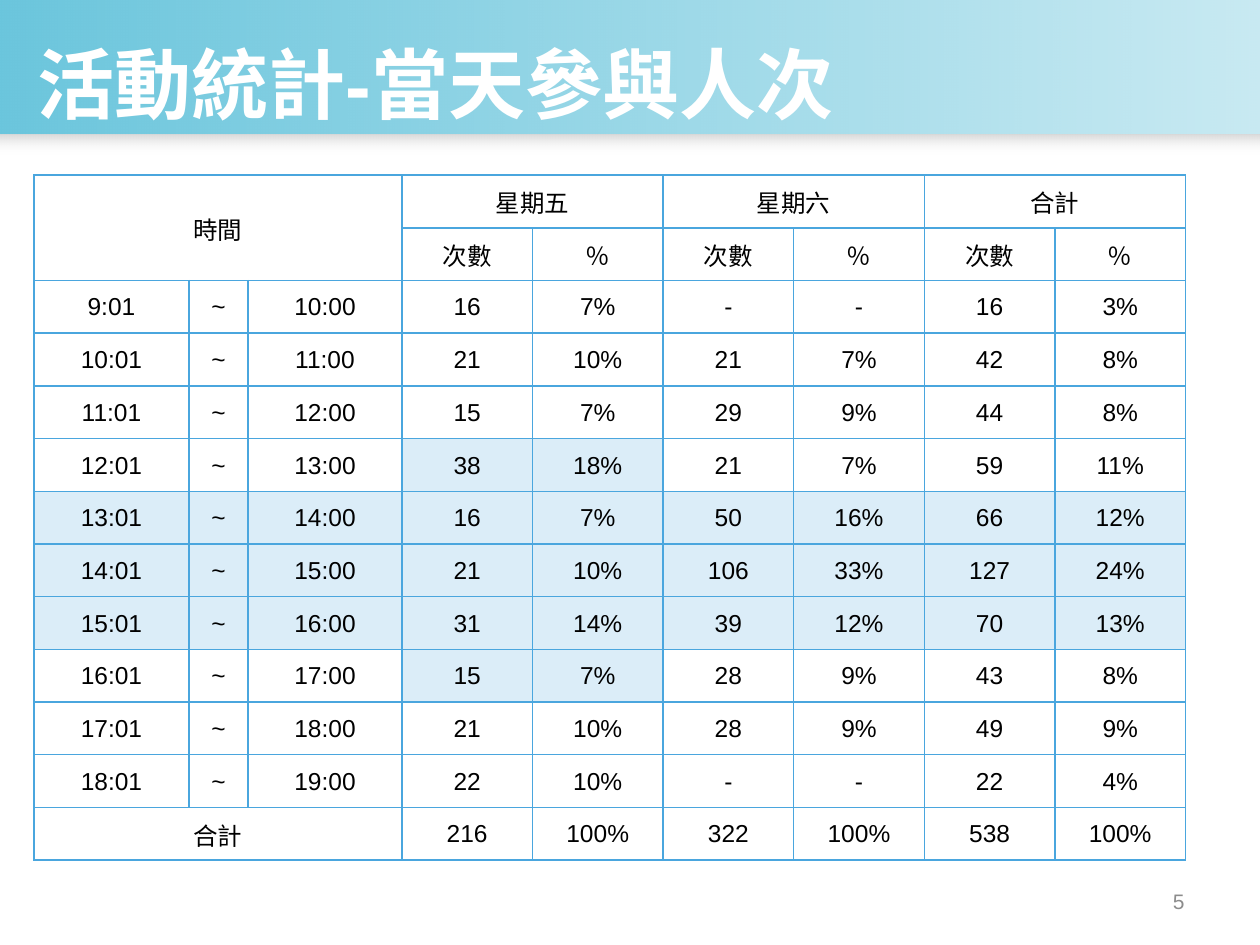
from dataclasses import dataclass
from lxml.etree import SubElement
from pptx import Presentation
from pptx.dml.color import RGBColor
from pptx.enum.shapes import MSO_SHAPE
from pptx.enum.text import MSO_ANCHOR, PP_ALIGN
from pptx.oxml.ns import qn
from pptx.util import Inches, Pt


@dataclass(frozen=True)
class Theme:
    font: str = "Arial"
    aqua: str = "6BC6DD"
    shade: str = "D9D9D9"
    white: str = "FFFFFF"
    black: str = "000000"
    gray: str = "8C8C8C"
    edge: str = "4AA6DE"
    tint: str = "DBEDF8"
    head: int = 44
    body: int = 14
    foot: int = 12


theme = Theme()


def style(frame, size, color, align, bold=False):
    for para in frame.paragraphs:
        para.alignment = align
        for run in para.runs:
            run.font.name = theme.font
            run.font.size = Pt(size)
            run.font.bold = bold
            run.font.color.rgb = RGBColor.from_string(color)


def border(cell):
    props = cell._tc.get_or_add_tcPr()
    for side in ("lnL", "lnR", "lnT", "lnB"):
        line = SubElement(props, qn(f"a:{side}"), w=str(Pt(1)))
        fill = SubElement(line, qn("a:solidFill"))
        SubElement(fill, qn("a:srgbClr"), val=theme.edge)


deck = Presentation()
deck.slide_width, deck.slide_height = Inches(10), Inches(7.5)
slide = deck.slides.add_slide(deck.slide_layouts[6])

# Title band and the soft shade below it, each fading to an opacity in percent
for top, height, start, end, fade, angle in (
    (0, 1.07, theme.aqua, theme.aqua, 37, 0),
    (1.07, 0.16, theme.shade, theme.white, 0, 270),
):
    band = slide.shapes.add_shape(
        MSO_SHAPE.RECTANGLE, 0, Inches(top), Inches(10), Inches(height))
    band.shadow.inherit = False
    band.line.fill.background()
    band.fill.gradient()
    band.fill.gradient_angle = angle
    for stop, color in zip(band.fill.gradient_stops, (start, end)):
        stop.color.rgb = RGBColor.from_string(color)
    last = list(band._element.iter(qn("a:srgbClr")))[-1]
    SubElement(last, qn("a:alpha"), val=str(fade * 1000))

# Title and page number
for text, left, top, width, height, size, color, align, bold in (
    ("活動統計-當天參與人次", 0.2, 0.16, 9.53, 0.99,
     theme.head, theme.white, PP_ALIGN.LEFT, True),
    ("5", 7.17, 6.95, 2.33, 0.4,
     theme.foot, theme.gray, PP_ALIGN.RIGHT, False),
):
    box = slide.shapes.add_textbox(
        Inches(left), Inches(top), Inches(width), Inches(height))
    frame = box.text_frame
    frame.word_wrap = True
    frame.vertical_anchor = MSO_ANCHOR.MIDDLE
    frame.text = text
    style(frame, size, color, align, bold)

# Table content: counts and shares for Friday, Saturday and both days
counts = (
    ("16", "7%", "-", "-", "16", "3%"),
    ("21", "10%", "21", "7%", "42", "8%"),
    ("15", "7%", "29", "9%", "44", "8%"),
    ("38", "18%", "21", "7%", "59", "11%"),
    ("16", "7%", "50", "16%", "66", "12%"),
    ("21", "10%", "106", "33%", "127", "24%"),
    ("31", "14%", "39", "12%", "70", "13%"),
    ("15", "7%", "28", "9%", "43", "8%"),
    ("21", "10%", "28", "9%", "49", "9%"),
    ("22", "10%", "-", "-", "22", "4%"),
)
rows = [
    ("時間", "", "", "星期五", "", "星期六", "", "合計", ""),
    ("", "", "") + ("次數", "％") * 3,
]
for hour, count in enumerate(counts, 9):
    rows.append((f"{hour}:01", "~", f"{hour + 1}:00") + count)
rows.append(("合計", "", "", "216", "100%", "322", "100%", "538", "100%"))

# Table grid
width, height = 9.14, 5.44
grid = slide.shapes.add_table(
    len(rows), 9, Inches(0.27), Inches(1.39), Inches(width), Inches(height)).table
grid.first_row = grid.horz_banding = False
times = [1.23, 0.47, 1.22]
sizes = times + [(width - sum(times)) / 6] * 6
for col, size in zip(grid.columns, sizes):
    col.width = Inches(size)
for row in grid.rows:
    row.height = Inches(height / len(rows))

# Merged cells: first row, first column, last row, last column
for top, left, low, right in (
    (0, 0, 1, 2), (0, 3, 0, 4), (0, 5, 0, 6), (0, 7, 0, 8), (12, 0, 12, 2),
):
    grid.cell(top, left).merge(grid.cell(low, right))

# Cell text, borders and tint of the busy hours
for r, row in enumerate(rows):
    for c, text in enumerate(row):
        cell = grid.cell(r, c)
        cell.margin_left = cell.margin_right = cell.margin_top = Inches(0.01)
        cell.margin_bottom = 0
        cell.vertical_anchor = MSO_ANCHOR.MIDDLE
        border(cell)
        if r in (6, 7, 8) or (r in (5, 9) and c in (3, 4)):
            cell.fill.solid()
            cell.fill.fore_color.rgb = RGBColor.from_string(theme.tint)
        else:
            cell.fill.background()
        if text:
            cell.text_frame.text = text
            style(cell.text_frame, theme.body, theme.black, PP_ALIGN.CENTER)

deck.save("out.pptx")
